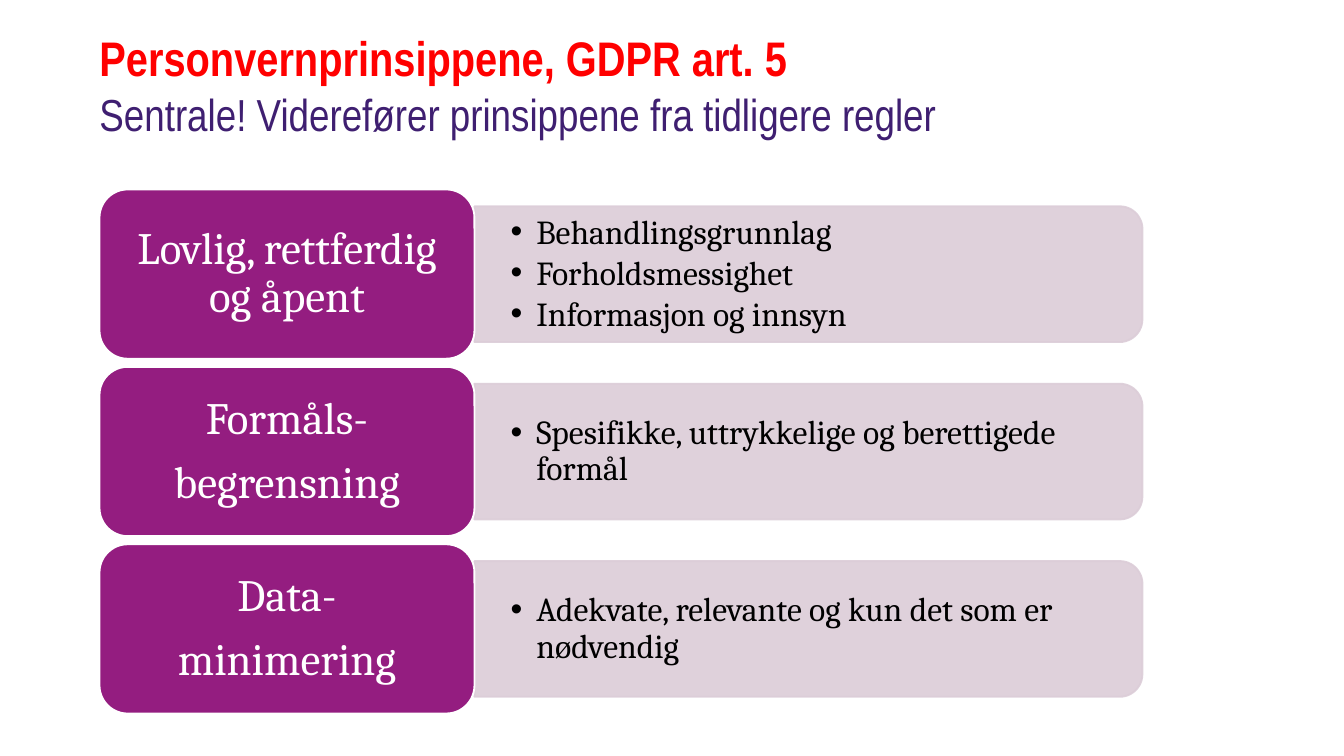
"""Build the slide on the GDPR article 5 privacy principles."""
import dataclasses
from typing import Any

import lxml.etree
import pptx
import pptx.dml.color
import pptx.enum.shapes
import pptx.enum.text
import pptx.oxml.ns
import pptx.util

Inches = pptx.util.Inches
Pt = pptx.util.Pt
Shapes = pptx.enum.shapes.MSO_SHAPE
Align = pptx.enum.text.PP_ALIGN
Anchor = pptx.enum.text.MSO_ANCHOR

SLIDE_WIDTH = 10
SLIDE_HEIGHT = SLIDE_WIDTH * 9 / 16
LEFT = 0.74
FIRST_TOP = 1.41
ROW_PITCH = 1.32
CARD_WIDTH, CARD_HEIGHT = 2.79, 1.26
PANEL_WIDTH, PANEL_HEIGHT = 4.97, 1.01
TEXT_WIDTH, TEXT_HEIGHT = 4.92, 0.91
HANGING = 0.19
PURPLE, LILAC, WHITE = "941D80", "DCCDD8", "FFFFFF"


@dataclasses.dataclass
class Principle:
    """A principle with its name lines and its points."""
    name: list[str]
    points: list[str]


PRINCIPLES = [
    Principle(["Lovlig, rettferdig og åpent"],
              ["Behandlingsgrunnlag", "Forholdsmessighet", "Informasjon og innsyn"]),
    Principle(["Formåls-", "begrensning"],
              ["Spesifikke, uttrykkelige og berettigede formål"]),
    Principle(["Data-", "minimering"],
              ["Adekvate, relevante og kun det som er nødvendig"]),
]
TITLE_LINES = [
    ("Personvernprinsippene, GDPR art. 5", "FF0000", 26, True),
    ("Sentrale! Viderefører prinsippene fra tidligere regler", "3F1F71", 24, False),
]
NAME_FORMAT = {"alignment": Align.CENTER, "line_spacing": 0.9, "space_after": Pt(8.4)}
POINT_FORMAT = {"alignment": Align.LEFT, "line_spacing": 0.9, "space_after": Pt(2.5)}


def apply(target: Any, values: dict[str, Any]) -> None:
    """Set each named attribute on the target."""
    for name, value in values.items():
        setattr(target, name, value)


def color(hex_value: str) -> pptx.dml.color.RGBColor:
    """Turn a hex string into a colour."""
    return pptx.dml.color.RGBColor.from_string(hex_value)


def style_font(font: Any, name: str, size: float, hex_value: str, bold: bool = False) -> None:
    """Format a font."""
    apply(font, {"name": name, "size": Pt(size), "bold": bold})
    font.color.rgb = color(hex_value)


def add_child(parent: Any, tag: str, **attributes: str) -> None:
    """Append a drawing element to its parent."""
    lxml.etree.SubElement(parent, pptx.oxml.ns.qn(tag), attributes)


def style_shape(shape: Any, fill: str, line: str) -> None:
    """Give a shape a flat fill and a thin line."""
    shape.shadow.inherit = False
    shape.fill.solid()
    shape.fill.fore_color.rgb = color(fill)
    shape.line.color.rgb = color(line)
    shape.line.width = Pt(1)


def write_lines(frame: Any, lines: list[str], size: float, hex_value: str,
                values: dict[str, Any], bulleted: bool = False) -> None:
    """Write one paragraph for each line."""
    apply(frame, {"word_wrap": True, "vertical_anchor": Anchor.MIDDLE})
    for index, line in enumerate(lines):
        para = frame.paragraphs[0] if index == 0 else frame.add_paragraph()
        if bulleted:
            properties = para._p.get_or_add_pPr()
            properties.set("marL", str(Inches(HANGING)))
            properties.set("indent", str(-Inches(HANGING)))
            add_child(properties, "a:buFont", typeface="Arial")
            add_child(properties, "a:buChar", char="•")
        apply(para, values)
        span = para.add_run()
        span.text = line
        style_font(span.font, "Cambria", size, hex_value)


def add_panel(page: Any, principle: Principle, middle: float) -> None:
    """Draw the light panel and its bulleted points."""
    left = LEFT + CARD_WIDTH
    panel = page.shapes.add_shape(
        Shapes.ROUND_2_SAME_RECTANGLE,
        Inches(left + (PANEL_WIDTH - PANEL_HEIGHT) / 2), Inches(middle - PANEL_WIDTH / 2),
        Inches(PANEL_HEIGHT), Inches(PANEL_WIDTH))
    panel.rotation = 90
    style_shape(panel, LILAC, LILAC)
    for tint in panel._element.spPr.iter(pptx.oxml.ns.qn("a:srgbClr")):
        add_child(tint, "a:alpha", val="90000")
    box = page.shapes.add_textbox(Inches(left), Inches(middle - TEXT_HEIGHT / 2),
                                  Inches(TEXT_WIDTH), Inches(TEXT_HEIGHT))
    apply(box.text_frame, {"margin_left": Inches(0.27), "margin_right": Inches(0.27),
                           "margin_top": Inches(0.14), "margin_bottom": Inches(0.14)})
    write_lines(box.text_frame, principle.points, 18, "000000", POINT_FORMAT, bulleted=True)


def add_card(page: Any, principle: Principle, top: float) -> None:
    """Draw the purple card with the name of the principle."""
    card = page.shapes.add_shape(Shapes.ROUNDED_RECTANGLE, Inches(LEFT), Inches(top),
                                 Inches(CARD_WIDTH), Inches(CARD_HEIGHT))
    style_shape(card, PURPLE, WHITE)
    write_lines(card.text_frame, principle.name, 24, WHITE, NAME_FORMAT)


def add_title(page: Any) -> None:
    """Place and fill the two-line title."""
    title = page.shapes.title
    apply(title, {"left": Inches(LEFT), "top": Inches(0.24),
                  "width": Inches(8.56), "height": Inches(0.81)})
    apply(title.text_frame, {"margin_left": 0, "margin_right": 0, "margin_top": 0,
                             "margin_bottom": 0, "vertical_anchor": Anchor.TOP,
                             "auto_size": pptx.enum.text.MSO_AUTO_SIZE.NONE})
    para = title.text_frame.paragraphs[0]
    apply(para, {"alignment": Align.LEFT, "line_spacing": Pt(29)})
    for index, (line, hex_value, size, bold) in enumerate(TITLE_LINES):
        if index:
            para.add_line_break()
        span = para.add_run()
        span.text = line
        style_font(span.font, "Arial Narrow", size, hex_value, bold)


def main() -> None:
    """Build and save the deck."""
    deck = pptx.Presentation()
    apply(deck, {"slide_width": Inches(SLIDE_WIDTH), "slide_height": Inches(SLIDE_HEIGHT)})
    page = deck.slides.add_slide(deck.slide_layouts.get_by_name("Title Only"))
    add_title(page)
    for index, principle in enumerate(PRINCIPLES):
        top = FIRST_TOP + index * ROW_PITCH
        add_panel(page, principle, top + CARD_HEIGHT / 2)
        add_card(page, principle, top)
    deck.save("out.pptx")


if __name__ == "__main__":
    main()
